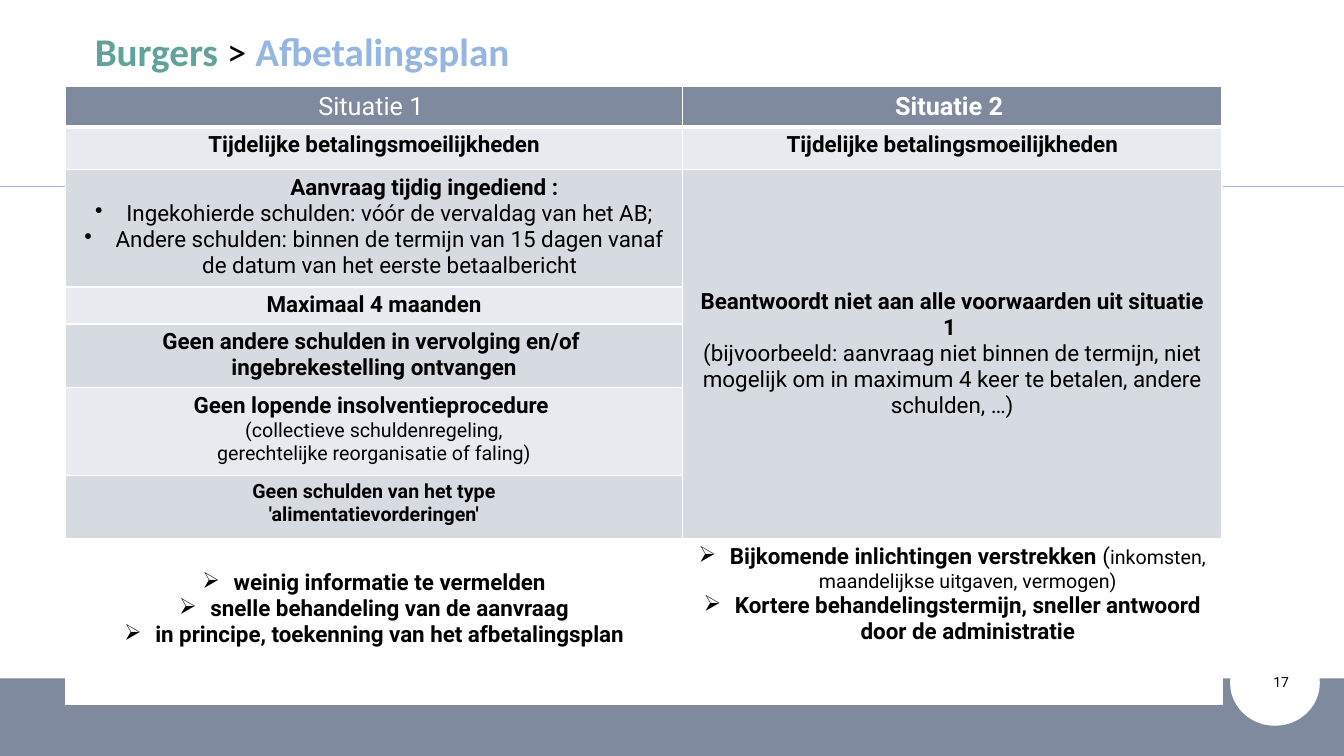
from lxml.etree import SubElement
from pptx import Presentation
from pptx.dml.color import RGBColor
from pptx.enum.shapes import MSO_CONNECTOR, MSO_SHAPE
from pptx.enum.text import MSO_ANCHOR, PP_ALIGN
from pptx.oxml import parse_xml
from pptx.oxml.ns import nsdecls, qn
from pptx.util import Inches, Pt

HUES = {
    "slate": "7F8A9F", "white": "FFFFFF", "black": "000000", "green": "61A39A",
    "blue": "96B6E2", "pale": "E7EAEE", "grey": "D6DBE1",
}


class Deck:
    def __init__(self):
        self.file = Presentation()
        self.file.slide_width = Inches(13.33)
        self.file.slide_height = Inches(7.5)
        self.slide = self.file.slides.add_slide(self.file.slide_layouts[5])
        self.items = self.slide.shapes
        self.font = "Roboto"

    def hue(self, name):
        return RGBColor.from_string(HUES[name])

    def style(self, run, size, bold=False, hue="black", font=None):
        run.font.name = font or self.font
        run.font.size = Pt(size)
        run.font.bold = bold
        run.font.color.rgb = self.hue(hue)

    def shape(self, kind, box, hue):
        item = self.items.add_shape(kind, *map(Inches, box))
        item.shadow.inherit = False
        item.fill.solid()
        item.fill.fore_color.rgb = self.hue(hue)
        item.line.fill.background()

    def line(self, start, end, hue, width):
        item = self.items.add_connector(
            MSO_CONNECTOR.STRAIGHT, *map(Inches, start + end))
        item.line.color.rgb = self.hue(hue)
        item.line.width = Pt(width)
        SubElement(item._element.spPr, qn("a:effectLst"))

    def title(self, box, parts, size):
        item = self.items.title
        item.left, item.top, item.width, item.height = map(Inches, box)
        frame = item.text_frame
        frame.vertical_anchor = MSO_ANCHOR.MIDDLE
        para = frame.paragraphs[0]
        para.alignment = PP_ALIGN.LEFT
        for text, bold, hue in parts:
            run = para.add_run()
            run.text = text
            self.style(run, size, bold, hue, "Calibri")

    def text(self, box, words, size):
        frame = self.items.add_textbox(*map(Inches, box)).text_frame
        frame.word_wrap = True
        frame.text = words
        self.style(frame.paragraphs[0].runs[0], size)

    def table(self, spot, cols, rows):
        size = Inches(sum(cols)), Inches(sum(rows))
        grid = self.items.add_table(
            len(rows), len(cols), *map(Inches, spot), *size).table
        for col, width in zip(grid.columns, cols):
            col.width = Inches(width)
        for row, height in zip(grid.rows, rows):
            row.height = Inches(height)
        return grid

    def paint(self, cell, hue, base=1):
        cell.fill.solid()
        cell.fill.fore_color.rgb = self.hue(hue)
        props = cell._tc.get_or_add_tcPr()
        for spot, side in enumerate("LRTB"):
            width = Pt(base if side == "B" else 1)
            props.insert(spot, parse_xml(
                f'<a:ln{side} {nsdecls("a")} w="{width}"><a:solidFill>'
                f'<a:srgbClr val="{HUES["white"]}"/></a:solidFill></a:ln{side}>'))

    def fill(self, cell, paras, hue="black"):
        frame = cell.text_frame
        for index, (runs, mark, inset) in enumerate(paras):
            para = frame.add_paragraph() if index else frame.paragraphs[0]
            para.alignment = PP_ALIGN.CENTER
            props = para._p.get_or_add_pPr()
            props.set("marL", str(Inches(inset)))
            props.set("indent", str(Inches(-inset if mark else 0)))
            if mark:
                SubElement(props, qn("a:buChar")).set("char", mark)
            for words, size, bold in runs:
                run = para.add_run()
                run.text = words
                self.style(run, size, bold, hue)


def plain(words, size=16, bold=True, inset=0):
    return [(words, size, bold)], None, inset


def point(mark, *runs):
    return list(runs), mark, 0.31


def main():
    deck = Deck()
    deck.shape(MSO_SHAPE.RECTANGLE, (0, 6.73, 13.33, 0.77), "slate")
    deck.shape(MSO_SHAPE.OVAL, (12.2, 6.35, 0.89, 0.85), "white")
    deck.line((0, 1.85), (13.33, 1.85), "blue", 0.5)
    deck.text((12.53, 6.63, 0.52, 0.4), "17", 10)
    deck.title((0.84, 0.22, 5.38, 0.57), [
        ("Burgers", True, "green"),
        (" > ", False, "black"),
        ("Afbetalingsplan", True, "blue"),
    ], 28)

    hard = plain("Tijdelijke betalingsmoeilijkheden")
    left = [
        [plain("Situatie 1 ", 18, False)],
        [hard],
        [plain("Aanvraag tijdig ingediend :", inset=1),
         point("•", ("Ingekohierde schulden: vóór de vervaldag van het AB;", 16, False)),
         point("•", ("Andere schulden: binnen de termijn van 15 dagen vanaf "
                     "de datum van het eerste betaalbericht", 16, False))],
        [plain("Maximaal 4 maanden")],
        [plain("Geen andere schulden in vervolging en/of "),
         plain("ingebrekestelling ontvangen")],
        [plain("Geen lopende insolventieprocedure "),
         plain("(collectieve schuldenregeling,", 14, False),
         plain("gerechtelijke reorganisatie of faling)", 14, False)],
        [plain("Geen schulden van het type", 14),
         plain("'alimentatievorderingen'", 14)],
        [point("➢", (words, 16, True)) for words in (
            "weinig informatie te vermelden",
            "snelle behandeling van de aanvraag",
            "in principe, toekenning van het afbetalingsplan")],
    ]
    right = {
        0: [plain("Situatie 2 ", 18)],
        1: [hard],
        2: [plain("Beantwoordt niet aan alle voorwaarden uit situatie 1 "),
            plain("(bijvoorbeeld: aanvraag niet binnen de termijn, niet mogelijk "
                  "om in maximum 4 keer te betalen, andere schulden, …)", bold=False)],
        7: [point("➢", ("Bijkomende inlichtingen verstrekken ", 16, True),
                  ("(", 16, False),
                  ("inkomsten, maandelijkse uitgaven, vermogen)", 14, False)),
            point("➢", ("Kortere behandelingstermijn, sneller antwoord "
                        "door de administratie", 16, True))],
    }
    rows = [0.39, 0.42, 1.12, 0.35, 0.61, 0.87, 0.63, 1.64]
    hues = ["slate"] + ["pale", "grey"] * 3 + ["white"]
    grid = deck.table((0.65, 0.86), [6.12, 5.35], rows)
    for row, hue in enumerate(hues):
        ink = "black" if row else "white"
        for col in range(2):
            shade = "grey" if col and 2 <= row <= 6 else hue
            deck.paint(grid.cell(row, col), shade, 1 if row else 3)
        deck.fill(grid.cell(row, 0), left[row], ink)
        if row in right:
            deck.fill(grid.cell(row, 1), right[row], ink)
    span = grid.cell(2, 1)
    span.merge(grid.cell(6, 1))
    span.vertical_anchor = MSO_ANCHOR.MIDDLE
    grid.cell(7, 0).margin_top = Inches(0.31)
    deck.file.save("out.pptx")


if __name__ == "__main__":
    main()
